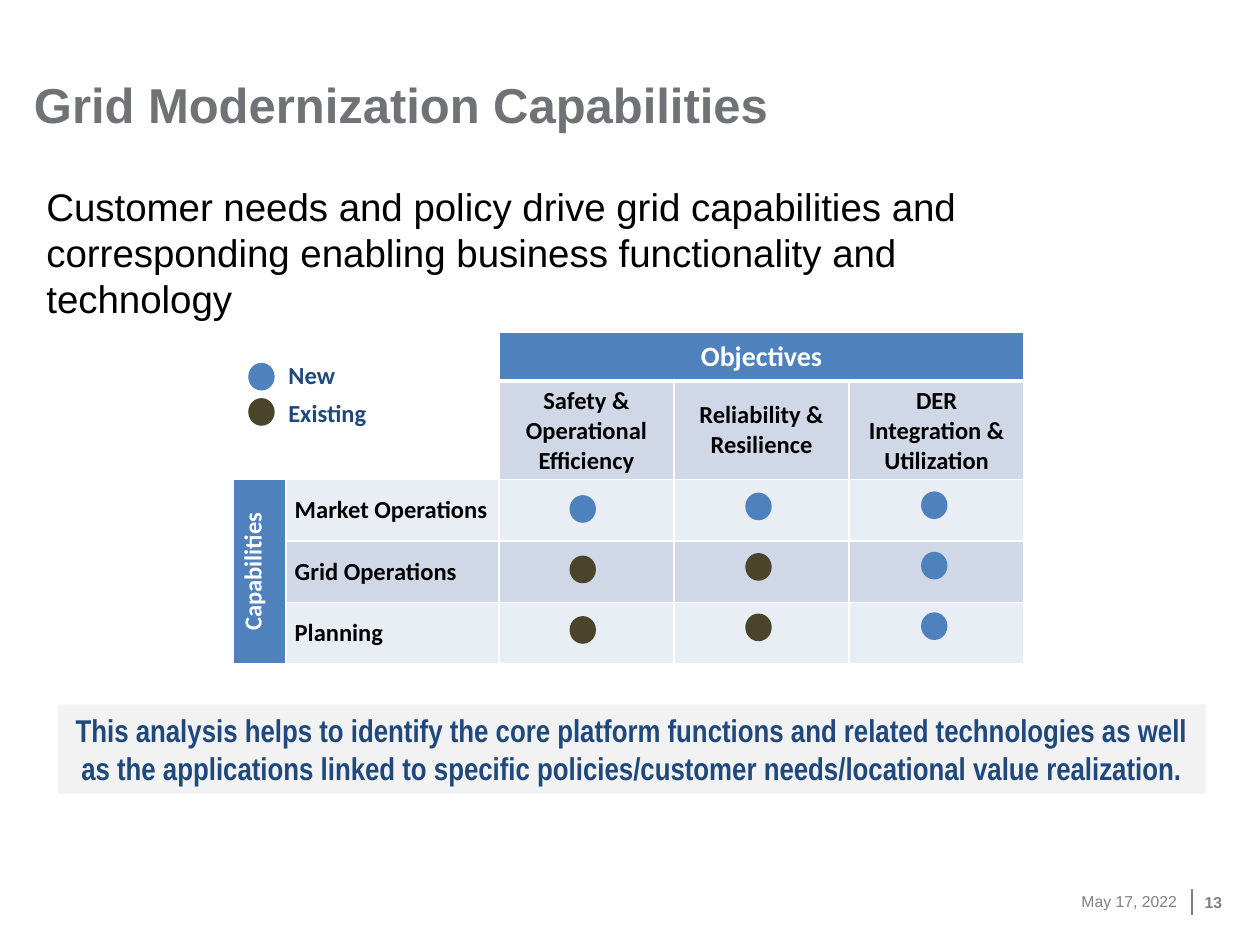
import pptx
import pptx.util
import pptx.dml.color
import pptx.enum.text
import pptx.enum.shapes
import pptx.oxml.ns
import lxml.etree

Pt = pptx.util.Pt
RGB = pptx.dml.color.RGBColor.from_string
Align = pptx.enum.text.PP_ALIGN
Anchor = pptx.enum.text.MSO_ANCHOR
Form = pptx.enum.shapes.MSO_SHAPE
qn = pptx.oxml.ns.qn

hues = {
    "new": "4F81BD", "old": "4A452A", "navy": "1F497D", "title": "707276",
    "foot": "808080", "pale": "E9EDF4", "band": "D0D8E8", "note": "F2F2F2",
    "black": "000000", "white": "FFFFFF",
}

deck = pptx.Presentation()
deck.slide_width = pptx.util.Inches(10)
deck.slide_height = pptx.util.Inches(7.5)
wide = deck.slide_width / 100
high = deck.slide_height / 100
slide = deck.slides.add_slide(deck.slide_layouts[6])
shapes = slide.shapes


def place(x, y, w, h):
    return round(x * wide), round(y * high), round(w * wide), round(h * high)


def write(frame, text, size, hue, face="Calibri", bold=True, align=Align.LEFT):
    frame.word_wrap = True
    line = frame.paragraphs[0]
    line.alignment = align
    run = line.add_run()
    run.text = text
    run.font.size = Pt(size)
    run.font.name = face
    run.font.bold = bold
    run.font.color.rgb = RGB(hues[hue])


labels = [
    ((80.3, 92.67, 13.1, 5.33), "May 17, 2022", 9, "foot", False, Align.RIGHT, Anchor.MIDDLE),
    ((95.6, 92.8, 2.5, 5.33), "13", 9, "foot", True, Align.LEFT, Anchor.MIDDLE),
    ((2.7, 4.93, 64.7, 9.2), "Grid Modernization Capabilities", 28, "title", True,
     Align.LEFT, Anchor.BOTTOM),
]
for spot, text, size, hue, bold, align, anchor in labels:
    frame = shapes.add_textbox(*place(*spot)).text_frame
    frame.margin_left = frame.margin_right = frame.margin_top = frame.margin_bottom = 0
    frame.vertical_anchor = anchor
    write(frame, text, size, hue, "Arial", bold, align)

x, y, w, h = place(94.6, 94.13, 0, 2.67)
rule = shapes.add_connector(pptx.enum.shapes.MSO_CONNECTOR.STRAIGHT, x, y, x + w, y + h)
rule.line.color.rgb = RGB(hues["foot"])
rule.line.width = Pt(1)
lxml.etree.SubElement(rule._element.spPr, qn("a:effectLst"))

lead = shapes.add_textbox(*place(2.7, 18.67, 82.7, 16.13)).text_frame
write(lead, "Customer needs and policy drive grid capabilities and corresponding "
      "enabling business functionality and technology", 22, "black", "Arial", False)

cols = [4.2, 16.9, 13.9, 13.9, 13.9]
rows = [4.93, 10.4, 6.5, 6.5, 6.5]
table = shapes.add_table(5, 5, *place(18.5, 35.2, sum(cols), sum(rows))).table
table.first_row = table.horz_banding = False
for col, share in zip(table.columns, cols):
    col.width = round(share * wide)
for row, share in zip(table.rows, rows):
    row.height = round(share * high)

words = [
    ["", "", "Objectives", "", ""],
    ["", "", "Safety & Operational Efficiency", "Reliability & Resilience",
     "DER Integration & Utilization"],
    ["Capabilities", "Market Operations", "", "", ""],
    ["", "Grid Operations", "", "", ""],
    ["", "Planning", "", "", ""],
]
fills = [
    [None, None, "new", "new", "new"],
    [None, None, "band", "band", "band"],
    ["new"] + ["pale"] * 4,
    ["new"] + ["band"] * 4,
    ["new"] + ["pale"] * 4,
]
table.cell(0, 2).merge(table.cell(0, 4))
table.cell(2, 0).merge(table.cell(4, 0))
for r in range(5):
    for c in range(5):
        cell = table.cell(r, c)
        cell.margin_left = cell.margin_right = Pt(5)
        cell.margin_top = cell.margin_bottom = Pt(3)
        cell.vertical_anchor = Anchor.MIDDLE
        props = cell._tc.get_or_add_tcPr()
        for side in "LRTB":
            thick = (r, side) in [(0, "B"), (1, "T")]
            edge = lxml.etree.SubElement(props, qn("a:ln" + side), w=str(Pt(3 if thick else 1)))
            paint = lxml.etree.SubElement(edge, qn("a:solidFill"))
            lxml.etree.SubElement(paint, qn("a:srgbClr"), val=hues["white"])
        if fills[r][c]:
            cell.fill.solid()
            cell.fill.fore_color.rgb = RGB(hues[fills[r][c]])
        else:
            cell.fill.background()
        if words[r][c]:
            write(cell.text_frame, words[r][c], 14 if r else 16,
                  "white" if fills[r][c] == "new" else "black",
                  align=Align.LEFT if c == 1 else Align.CENTER)
table.cell(2, 0)._tc.get_or_add_tcPr().set("vert", "vert270")

note = shapes.add_shape(Form.RECTANGLE, *place(4.6, 74.53, 91.1, 9.47))
note.shadow.inherit = False
note.fill.solid()
note.fill.fore_color.rgb = RGB(hues["note"])
note.line.fill.background()
write(note.text_frame, "This analysis helps to identify the core platform functions and "
      "related technologies as well as the applications linked to specific "
      "policies/customer needs/locational value realization.",
      18, "navy", "Arial Narrow", True, Align.CENTER)

dots = [(19.7, 38.4, "new"), (19.7, 42.13, "old")]
tops = [52.4, 52.13, 52]
marks = [["new", "old", "old"], ["new", "old", "old"], ["new", "new", "new"]]
for c, (top, kinds) in enumerate(zip(tops, marks)):
    for r, kind in enumerate(kinds):
        dots.append((45.2 + 13.95 * c, top + 6.4 * r, kind))
for x, y, kind in dots:
    dot = shapes.add_shape(Form.OVAL, *place(x, y, 2.1, 2.93))
    dot.shadow.inherit = False
    dot.fill.solid()
    dot.fill.fore_color.rgb = RGB(hues[kind])
    dot.line.fill.background()

for text, y, w in [("New", 37.47, 7.5), ("Existing", 41.47, 8.7)]:
    write(shapes.add_textbox(*place(21.9, y, w, 4.53)).text_frame, text, 14, "navy")

deck.save("out.pptx")
